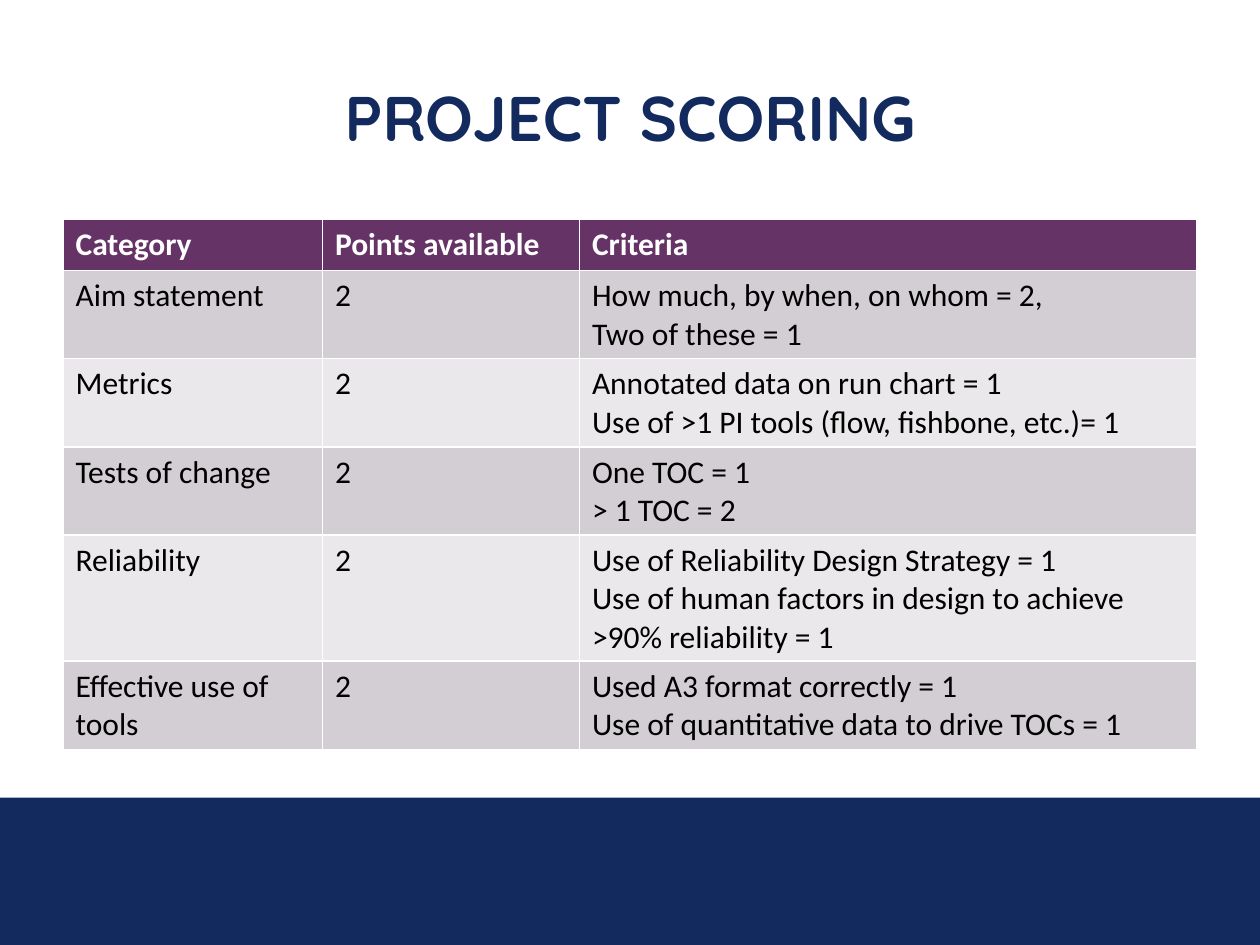
"""Build the project scoring slide with its table of categories, points and criteria."""
from dataclasses import dataclass

import pptx
import pptx.dml.color
import pptx.enum.shapes
import pptx.enum.text
import pptx.util
from pptx.util import Cm


def rgb(value):
    return pptx.dml.color.RGBColor.from_string(value)


@dataclass(frozen=True)
class Theme:
    navy: str = "122A5D"
    header: str = "663366"
    bands: tuple = ("D3CED3", "EAE8EA")
    white: str = "FFFFFF"
    black: str = "000000"
    title_font: str = "Quicksand"
    body_font: str = "Calibri"
    title_size: int = 36
    body_size: int = 18


theme = Theme()


def style(paragraph, font_name, size, color, bold):
    paragraph.font.name = font_name
    paragraph.font.size = pptx.util.Pt(size)
    paragraph.font.color.rgb = rgb(color)
    paragraph.font.bold = bold


scoring = [
    ("Category", "Points available", "Criteria"),
    ("Aim statement", "2", "How much, by when, on whom = 2,\nTwo of these = 1"),
    ("Metrics", "2", "Annotated data on run chart = 1\nUse of >1 PI tools (flow, fishbone, etc.)= 1"),
    ("Tests of change", "2", "One TOC = 1\n> 1 TOC = 2"),
    ("Reliability", "2", "Use of Reliability Design Strategy = 1\n"
     "Use of human factors in design to achieve >90% reliability = 1"),
    ("Effective use of tools", "2", "Used A3 format correctly = 1\nUse of quantitative data to drive TOCs = 1"),
]
column_widths = [Cm(5.23), Cm(5.18), Cm(12.45)]
row_height = Cm(1.03)
margin = Cm(1.27)

deck = pptx.Presentation()
deck.slide_width, deck.slide_height = Cm(25.4), Cm(19.05)
slide = deck.slides.add_slide(deck.slide_layouts[6])
content_width = deck.slide_width - 2 * margin

footer_top = Cm(16.08)
footer = slide.shapes.add_shape(
    pptx.enum.shapes.MSO_SHAPE.RECTANGLE, 0, footer_top, deck.slide_width, deck.slide_height - footer_top
)
footer.shadow.inherit = False
footer.fill.solid()
footer.fill.fore_color.rgb = rgb(theme.navy)
footer.line.fill.background()

heading = slide.shapes.add_textbox(margin, Cm(0.76), content_width, Cm(3.18)).text_frame
heading.word_wrap = True
heading.vertical_anchor = pptx.enum.text.MSO_ANCHOR.MIDDLE
heading.text = "PROJECT SCORING"
heading.paragraphs[0].alignment = pptx.enum.text.PP_ALIGN.CENTER
style(heading.paragraphs[0], theme.title_font, theme.title_size, theme.navy, True)

score_table = slide.shapes.add_table(
    len(scoring), len(column_widths), margin, Cm(4.42), content_width, row_height * len(scoring)
).table
for column, width in zip(score_table.columns, column_widths):
    column.width = width

for row_index, entries in enumerate(scoring):
    is_header = row_index == 0
    score_table.rows[row_index].height = row_height
    row_fill = theme.header if is_header else theme.bands[(row_index - 1) % 2]
    text_color = theme.white if is_header else theme.black
    for column_index, entry in enumerate(entries):
        cell = score_table.cell(row_index, column_index)
        cell.fill.solid()
        cell.fill.fore_color.rgb = rgb(row_fill)
        cell.text = entry
        for paragraph in cell.text_frame.paragraphs:
            style(paragraph, theme.body_font, theme.body_size, text_color, is_header)

deck.save("out.pptx")
